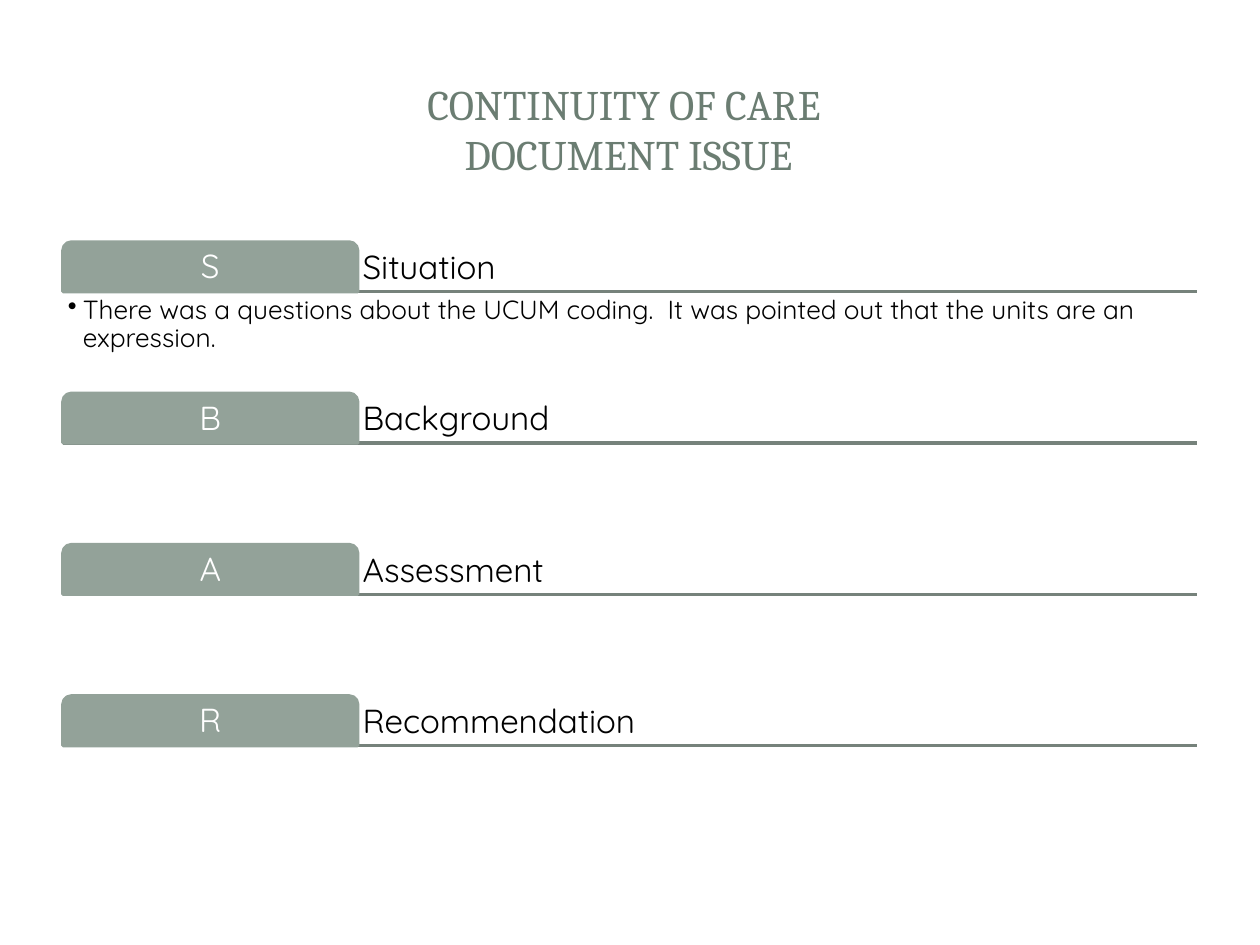
from lxml import etree
from pptx import Presentation
from pptx.dml.color import RGBColor
from pptx.enum.shapes import MSO_CONNECTOR, MSO_SHAPE
from pptx.enum.text import MSO_ANCHOR, PP_ALIGN
from pptx.oxml.ns import qn
from pptx.util import Cm, Pt

LEFT, CENTER = PP_ALIGN.LEFT, PP_ALIGN.CENTER
TOP, MIDDLE, BOTTOM = MSO_ANCHOR.TOP, MSO_ANCHOR.MIDDLE, MSO_ANCHOR.BOTTOM
TAB_SHAPE = MSO_SHAPE.ROUND_2_SAME_RECTANGLE
STRAIGHT = MSO_CONNECTOR.STRAIGHT

COLORS = {
    "title": "6B7D72",
    "tab": "93A299",
    "rule": "76827B",
    "text": "000000",
    "tab_text": "FFFFFF",
}
HEAD_FONT, BODY_FONT = "Cambria", "Quicksand"
ROW_PITCH, TAB_W, TAB_H = 3.05, 5.94, 1.0
SECTIONS = [
    ("S", "Situation",
     "There was a questions about the UCUM coding.  "
     "It was pointed out that the units are an expression."),
    ("B", "Background", ""),
    ("A", "Assessment", ""),
    ("R", "Recommendation", ""),
]


def rgb(name):
    """Return the named palette colour."""
    return RGBColor.from_string(COLORS[name])


def set_text(sp, text, size, color, font=BODY_FONT, align=LEFT, anchor=TOP, spacing=0.9):
    """Fill a shape with one formatted paragraph and return the paragraph."""
    tf = sp.text_frame
    tf.word_wrap = True
    tf.vertical_anchor = anchor
    tf.margin_left = tf.margin_right = tf.margin_top = tf.margin_bottom = Cm(0.1)
    p = tf.paragraphs[0]
    p.text = text
    p.alignment = align
    p.line_spacing = spacing
    for r in p.runs:
        r.font.name = font
        r.font.size = Pt(size)
        r.font.color.rgb = rgb(color)
    return p


def add_text(slide, x, y, w, h, text, size, color, **style):
    """Add a text box measured in centimetres and return its paragraph."""
    sp = slide.shapes.add_textbox(Cm(x), Cm(y), Cm(w), Cm(h))
    return set_text(sp, text, size, color, **style)


def add_bullet(p):
    """Give a paragraph a round bullet with a hanging indent."""
    pPr = p._p.get_or_add_pPr()
    pPr.set("marL", str(Cm(0.3)))
    pPr.set("indent", str(-Cm(0.3)))
    etree.SubElement(pPr, qn("a:buChar"), char="•")


def add_title(slide, x, y, w, h):
    """Place the centred two-line title in the given box."""
    add_text(slide, x, y, w, h, "CONTINUITY OF CARE \vDOCUMENT ISSUE", 24, "title",
             font=HEAD_FONT, align=CENTER, anchor=MIDDLE, spacing=1.0)


def add_section(slide, x, y, w, h, letter, heading, detail):
    """Place a lettered tab, heading, rule and optional detail in the given box."""
    rule_y = y + TAB_H
    rule = slide.shapes.add_connector(STRAIGHT, Cm(x), Cm(rule_y), Cm(x + w), Cm(rule_y))
    rule.line.color.rgb = rgb("rule")
    rule.line.width = Pt(2)
    etree.SubElement(rule._element.spPr, qn("a:effectLst"))

    add_text(slide, x + TAB_W, y, w - TAB_W, TAB_H, heading, 19, "text", anchor=BOTTOM)

    tab = slide.shapes.add_shape(TAB_SHAPE, Cm(x), Cm(y), Cm(TAB_W), Cm(TAB_H))
    tab.shadow.inherit = False
    tab.adjustments[0] = 0.17
    tab.fill.solid()
    tab.fill.fore_color.rgb = rgb("tab")
    tab.line.color.rgb = rgb("tab")
    tab.line.width = Pt(2)
    set_text(tab, letter, 19, "tab_text", align=CENTER, anchor=MIDDLE)

    if detail:
        add_bullet(add_text(slide, x, rule_y, w, h - TAB_H, detail, 15, "text"))


def main():
    """Build and save the slide."""
    prs = Presentation()
    prs.slide_width, prs.slide_height = Cm(25.4), Cm(19.05)
    slide = prs.slides.add_slide(prs.slide_layouts[6])
    add_title(slide, 1.2, 1.14, 22.94, 2.9)
    for i, section in enumerate(SECTIONS):
        add_section(slide, 1.27, 4.88 + i * ROW_PITCH, 22.86, 3, *section)
    prs.save("out.pptx")


if __name__ == "__main__":
    main()
